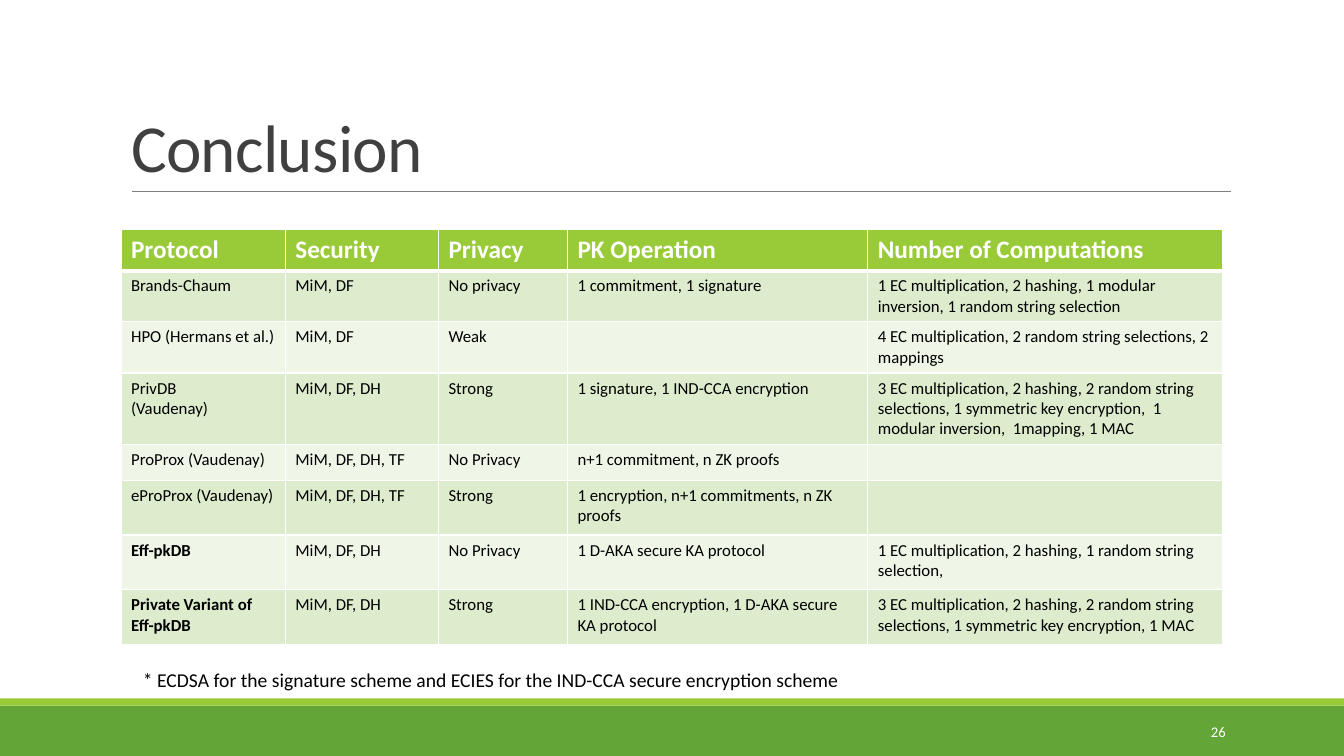
from lxml import etree
from pptx import Presentation
from pptx.dml.color import RGBColor
from pptx.enum.shapes import MSO_CONNECTOR, MSO_SHAPE
from pptx.enum.text import MSO_ANCHOR, PP_ALIGN
from pptx.oxml.ns import qn
from pptx.util import Cm, Pt

RECT = MSO_SHAPE.RECTANGLE
LINE = MSO_CONNECTOR.STRAIGHT
BOTTOM, MIDDLE = MSO_ANCHOR.BOTTOM, MSO_ANCHOR.MIDDLE
LEFT, RIGHT = PP_ALIGN.LEFT, PP_ALIGN.RIGHT


def color(code):
    return RGBColor.from_string(code)


def style(para, size, code, bold=False, align=LEFT):
    para.alignment = align
    font = para.font
    font.name, font.size, font.bold = "Calibri", Pt(size), bold
    font.color.rgb = color(code)


deck = Presentation()
deck.slide_width, deck.slide_height = Cm(33.87), Cm(19.05)
slide = deck.slides.add_slide(deck.slide_layouts[5])
shapes = slide.shapes

# Footer bands
for top, height, code in [(17.78, 1.27, "63A537"), (17.6, 0.18, "99CB38")]:
    band = shapes.add_shape(RECT, 0, Cm(top), deck.slide_width, Cm(height))
    band.shadow.inherit = False
    band.fill.solid()
    band.fill.fore_color.rgb = color(code)
    band.line.fill.background()

# Title and its rule
title = shapes.title
title.left, title.top, title.width, title.height = Cm(3.05), Cm(0.8), Cm(27.94), Cm(4.03)
frame = title.text_frame
frame.text = "Conclusion"
frame.vertical_anchor = BOTTOM
head = frame.paragraphs[0]
head.line_spacing = 0.85
style(head, 48, "404040")
head.runs[0]._r.get_or_add_rPr().set("spc", "-50")

rule = shapes.add_connector(LINE, Cm(3.33), Cm(4.83), Cm(31.01), Cm(4.83))
rule.line.color.rgb = color("808080")
rule.line.width = Pt(0.5)
etree.SubElement(rule._element.spPr, qn("a:effectLst"))

# Protocol comparison: a line break in a cell starts a new paragraph
rows = [
    ["Protocol", "Security", "Privacy", "PK Operation", "Number of Computations"],
    ["Brands-Chaum", "MiM, DF", "No privacy", "1 commitment, 1 signature",
     "1 EC multiplication, 2 hashing, 1 modular inversion, 1 random string selection"],
    ["HPO (Hermans et al.)", "MiM, DF", "Weak", "",
     "4 EC multiplication, 2 random string selections, 2 mappings"],
    ["PrivDB\n(Vaudenay)", "MiM, DF, DH", "Strong", "1 signature, 1 IND-CCA encryption",
     "3 EC multiplication, 2 hashing, 2 random string selections, "
     "1 symmetric key encryption,  1 modular inversion,  1mapping, 1 MAC"],
    ["ProProx (Vaudenay)", "MiM, DF, DH, TF", "No Privacy", "n+1 commitment, n ZK proofs", ""],
    ["eProProx (Vaudenay)", "MiM, DF, DH, TF", "Strong",
     "1 encryption, n+1 commitments, n ZK proofs", ""],
    ["Eff-pkDB", "MiM, DF, DH", "No Privacy", "1 D-AKA secure KA protocol",
     "1 EC multiplication, 2 hashing, 1 random string\nselection,"],
    ["Private Variant of\nEff-pkDB", "MiM, DF, DH", "Strong",
     "1 IND-CCA encryption, 1 D-AKA secure KA protocol",
     "3 EC multiplication, 2 hashing, 2 random string selections, "
     "1 symmetric key encryption, 1 MAC"],
]
widths = [4.14, 3.86, 3.25, 7.57, 8.94]
heights = [0.99, 1.29, 1.29, 1.79, 0.9, 1.38, 1.38, 1.38]
table = shapes.add_table(len(rows), len(widths), Cm(3.05), Cm(5.79),
                         Cm(sum(widths)), Cm(sum(heights))).table
for col, width in zip(table.columns, widths):
    col.width = Cm(width)

for r, row in enumerate(rows):
    table.rows[r].height = Cm(heights[r])
    for c, text in enumerate(row):
        cell = table.cell(r, c)
        cell.text = text
        for para in cell.text_frame.paragraphs:
            if r == 0:
                style(para, 18, "FFFFFF", True)
            else:
                style(para, 12, "000000", c == 0 and r >= 6)
            if not text:
                etree.SubElement(para._p, qn("a:endParaRPr"), sz="1200")

        # White borders, thick below the header
        props = cell._tc.get_or_add_tcPr()
        for side in "LRTB":
            thick = (r, side) in [(0, "B"), (1, "T")]
            edge = etree.SubElement(props, qn(f"a:ln{side}"), w=str(Pt(3 if thick else 1)))
            fill = etree.SubElement(edge, qn("a:solidFill"))
            etree.SubElement(fill, qn("a:srgbClr"), val="FFFFFF")
        cell.fill.solid()
        shade = "99CB38" if r == 0 else "DEECCE" if r % 2 else "EFF6E8"
        cell.fill.fore_color.rgb = color(shade)

# Slide number and footnote
notes = [
    ("26", 27.51, 17.93, 3.63, 1.02, 10.5, "FFFFFF", RIGHT),
    ("* ECDSA for the signature scheme and ECIES for the IND-CCA secure encryption scheme",
     3.35, 16.69, 19.94, 0.86, 14, "000000", LEFT),
]
for text, left, top, width, height, size, code, align in notes:
    box = shapes.add_textbox(Cm(left), Cm(top), Cm(width), Cm(height))
    frame = box.text_frame
    frame.word_wrap = True
    frame.vertical_anchor = MIDDLE
    frame.text = text
    style(frame.paragraphs[0], size, code, align=align)

deck.save("out.pptx")
